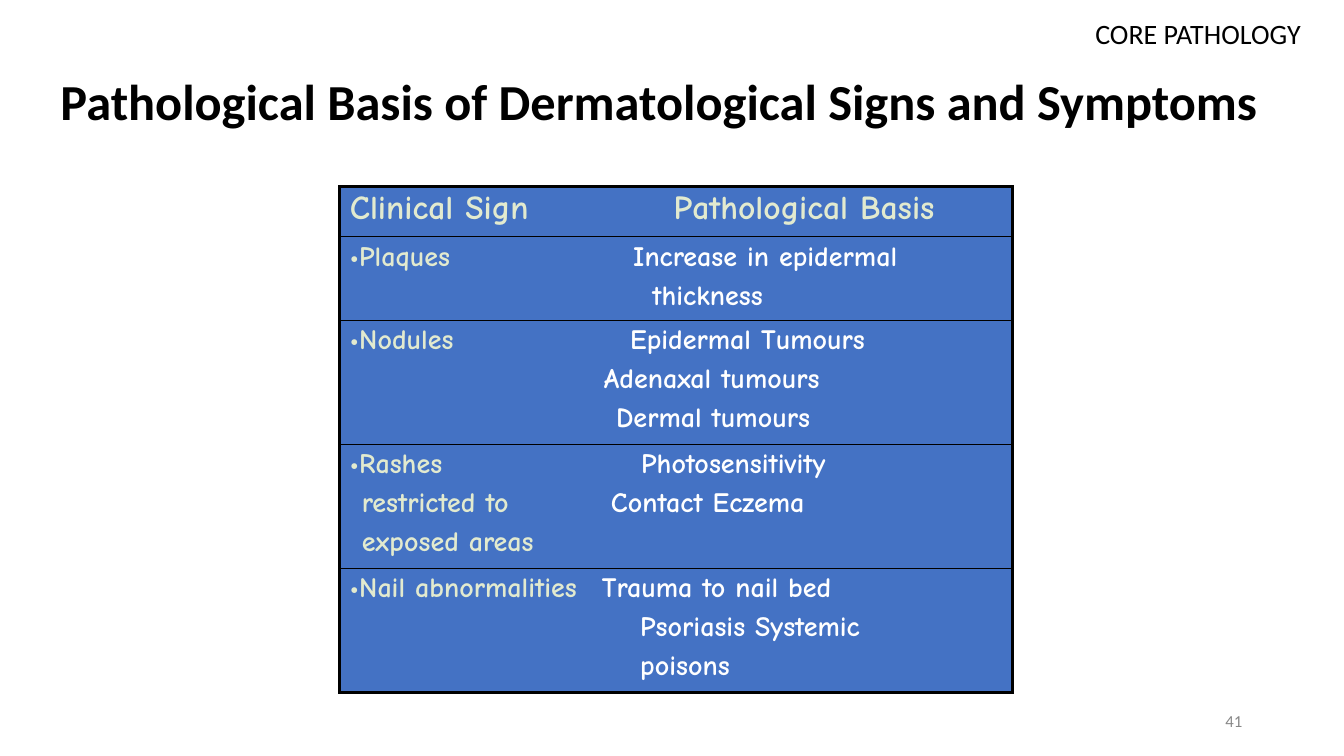
from dataclasses import dataclass
from lxml.etree import SubElement
from pptx import Presentation
from pptx.dml.color import RGBColor
from pptx.enum.text import MSO_ANCHOR as ANCHOR, PP_ALIGN as ALIGN
from pptx.oxml import parse_xml
from pptx.oxml.ns import nsdecls, qn
from pptx.util import Inches, Pt


@dataclass(frozen=True)
class Theme:
    black: str = "000000"
    grey: str = "888888"
    blue: str = "4472C4"
    cream: str = "E2EACF"
    white: str = "FFFFFF"
    sans: str = "Calibri"
    comic: str = "Comic Neue"
    title: int = 36
    head: int = 24
    body: int = 20
    number: int = 12


T = Theme()


def add_run(p, text, font, size, color, bold=False):
    r = p.add_run()
    r.text = text
    r.font.name = font
    r.font.size = Pt(size)
    r.font.bold = bold
    r.font.color.rgb = RGBColor.from_string(color)


def set_borders(cell, widths):
    tc_pr = cell._tc.get_or_add_tcPr()
    for i, (side, width) in enumerate(zip("LRTB", widths)):
        fill = f'<a:solidFill><a:srgbClr val="{T.black}"/></a:solidFill>' if width else "<a:noFill/>"
        tc_pr.insert(i, parse_xml(f'<a:ln{side} {nsdecls("a")} w="{Pt(width)}">{fill}</a:ln{side}>'))


prs = Presentation()
prs.slide_width, prs.slide_height = Inches(13.33), Inches(7.5)
s = prs.slides.add_slide(prs.slide_layouts[5])

title = s.shapes.title
title.left, title.top, title.width, title.height = map(Inches, (0.5, 0.23, 12.42, 1.45))
title.text_frame.vertical_anchor = ANCHOR.MIDDLE
p = title.text_frame.paragraphs[0]
p.alignment = ALIGN.LEFT
p.line_spacing = 1.15
add_run(p, "Pathological Basis of Dermatological Signs and Symptoms", T.sans, T.title, T.black, True)

LABELS = [
    ("CORE PATHOLOGY", (9.53, 0.06, 3.47, 0.45), T.body, T.black, ANCHOR.TOP, 0.1),
    ("41", (9.42, 6.95, 3, 0.4), T.number, T.grey, ANCHOR.MIDDLE, 0.05),
]
for text, box, size, color, anchor, inset in LABELS:
    tf = s.shapes.add_textbox(*map(Inches, box)).text_frame
    tf.word_wrap = True
    tf.vertical_anchor = anchor
    tf.margin_top = tf.margin_bottom = Inches(inset)
    p = tf.paragraphs[0]
    p.alignment = ALIGN.RIGHT
    add_run(p, text, T.sans, size, color)

COL_WIDTHS = [2.38, 4.29]
ROW_HEIGHTS = [0.5, 0.83, 1.23, 1.23, 1.23]
ROWS = [
    ([("Clinical Sign", 0.1)], [("Pathological Basis", 0.16)]),
    ([("•Plaques", 0.1)], [("Increase in epidermal", 0.53), ("thickness", 0.72)]),
    ([("•Nodules", 0.1)], [("Epidermal Tumours", 0.5), ("Adenaxal tumours", 0.24), ("Dermal tumours", 0.36)]),
    ([("•Rashes", 0.1), ("restricted to exposed areas", 0.22)], [("Photosensitivity", 0.61), ("Contact Eczema", 0.31)]),
    ([("•Nail abnormalities\t", 0.1), ("Psoriasis Systemic poisons", 2.98)], []),
]
LAST = len(ROWS) - 1

table = s.shapes.add_table(len(ROWS), 2, Inches(3.37), Inches(1.85),
                           Inches(sum(COL_WIDTHS)), Inches(sum(ROW_HEIGHTS))).table
table.first_row = table.horz_banding = False
for column, width in zip(table.columns, COL_WIDTHS):
    column.width = Inches(width)
for row, height in zip(table.rows, ROW_HEIGHTS):
    row.height = Inches(height)
table.cell(LAST, 0).merge(table.cell(LAST, 1))

for i, row in enumerate(ROWS):
    for j, lines in enumerate(row):
        cell = table.cell(i, j)
        cell.fill.solid()
        cell.fill.fore_color.rgb = RGBColor.from_string(T.blue)
        cell.margin_left = cell.margin_right = cell.margin_bottom = 0
        cell.margin_top = Inches(0.04 if i else 0.03)
        set_borders(cell, (0 if j else 2.25, 2.25 if j or i == LAST else 0,
                           1 if i else 2.25, 2.25 if i == LAST else 1))
        for k, (text, indent) in enumerate(lines):
            p = cell.text_frame.add_paragraph() if k else cell.text_frame.paragraphs[0]
            p_pr = p._p.get_or_add_pPr()
            p_pr.set("marL", str(Inches(indent)))
            p_pr.set("indent", "0")
            if k and j:
                p.space_before = Pt(4.8)
            elif k:
                p.line_spacing = 1.2
            if j and i == 0:
                p.alignment = ALIGN.CENTER
            in_cream = i == 0 or (j == 0 and not (i == LAST and k))
            add_run(p, text, T.comic, T.body if i else T.head, T.cream if in_cream else T.white, True)

nail, causes = table.cell(LAST, 0).text_frame.paragraphs
tabs = SubElement(nail._p.get_or_add_pPr(), qn("a:tabLst"))
SubElement(tabs, qn("a:tab"), pos=str(Inches(3.01)), algn="l")
add_run(nail, "Trauma to nail bed", T.comic, T.body, T.white, True)
causes._p.get_or_add_pPr().set("marR", str(Inches(1.1)))

prs.save("out.pptx")
